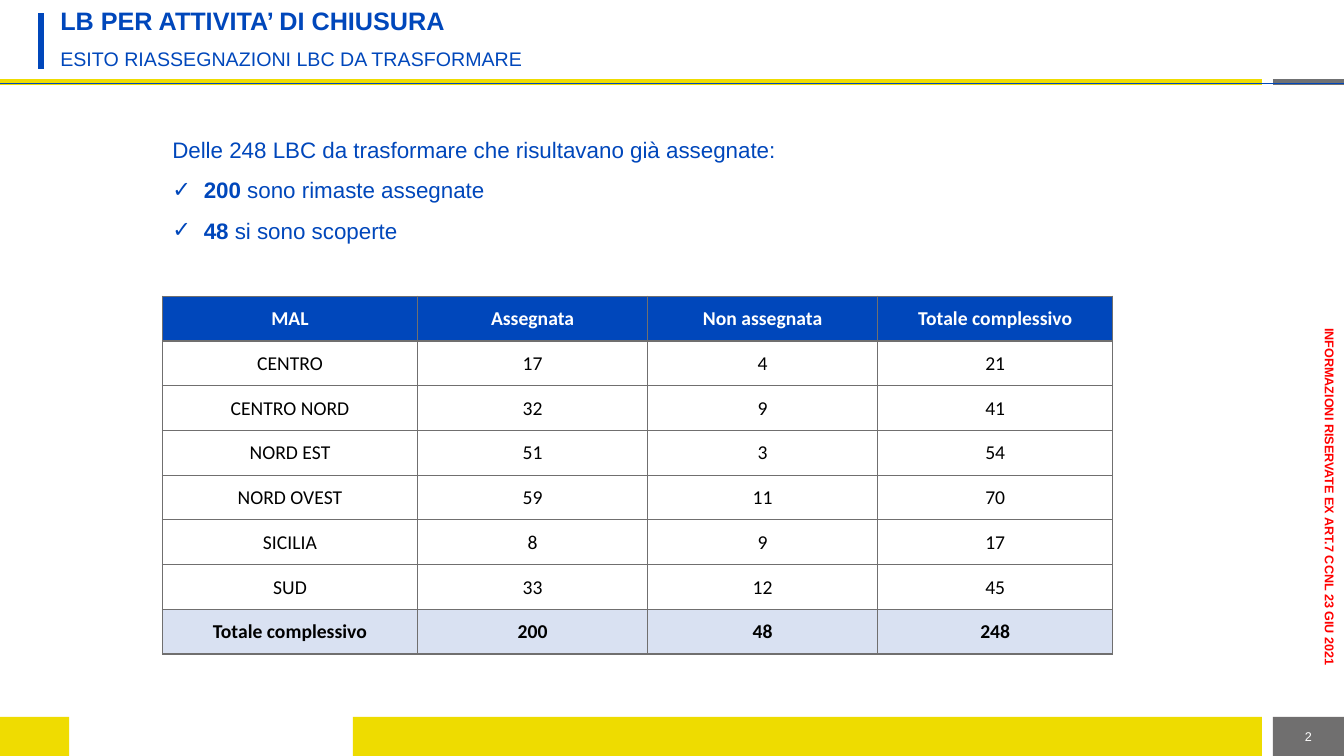
from dataclasses import dataclass

from lxml.etree import SubElement
from pptx import Presentation
from pptx.dml.color import RGBColor as RGB
from pptx.enum.shapes import MSO_CONNECTOR as CONNECTOR, MSO_SHAPE as SHAPE
from pptx.enum.text import MSO_ANCHOR as ANCHOR, PP_ALIGN as ALIGN
from pptx.oxml.ns import qn
from pptx.util import Pt


@dataclass(frozen=True)
class Theme:
    blue: str = "0047BB"
    yellow: str = "EEDC00"
    corner_yellow: str = "EFDC01"
    gray: str = "706F6F"
    rule_gray: str = "707173"
    pale_blue: str = "D9E1F2"
    red: str = "FF0000"
    white: str = "FFFFFF"
    black: str = "000000"
    font: str = "Arial"
    table_font: str = "Calibri"
    title_size: int = 18
    body_size: int = 16
    subtitle_size: int = 14
    table_size: int = 14
    small_size: int = 9


theme = Theme()


def add_run(paragraph, text, size, color, bold=False, font=theme.font):
    run = paragraph.add_run()
    run.text = text
    for name, value in {"name": font, "size": Pt(size), "bold": bold}.items():
        setattr(run.font, name, value)
    run.font.color.rgb = RGB.from_string(color)


def add_text_frame(left, top, width, height, anchor=ANCHOR.MIDDLE, rotation=0):
    """Add a wrapping text box and return its text frame."""
    box = slide.shapes.add_textbox(Pt(left), Pt(top), Pt(width), Pt(height))
    box.rotation = rotation
    box.text_frame.word_wrap = True
    box.text_frame.vertical_anchor = anchor
    return box.text_frame


SLIDE_WIDTH, SLIDE_HEIGHT = 960, 540
FOOTER_TOP, FOOTER_HEIGHT = 512, 28
BAND_END, NUMBER_LEFT = 901.4, 909.2
NUMBER_WIDTH = SLIDE_WIDTH - NUMBER_LEFT

prs = Presentation()
prs.slide_width, prs.slide_height = Pt(SLIDE_WIDTH), Pt(SLIDE_HEIGHT)
slide = prs.slides.add_slide(prs.slide_layouts[6])

# Footer bands
for left, width, color in (
    (0, 49.5, theme.corner_yellow),
    (BAND_END, NUMBER_LEFT - BAND_END, theme.white),
    (NUMBER_LEFT, NUMBER_WIDTH, theme.gray),
    (252, BAND_END - 252, theme.yellow),
):
    band = slide.shapes.add_shape(
        SHAPE.RECTANGLE, Pt(left), Pt(FOOTER_TOP), Pt(width), Pt(FOOTER_HEIGHT))
    band.shadow.inherit = False
    band.fill.solid()
    band.fill.fore_color.rgb = RGB.from_string(color)
    band.line.fill.background()

# Header rules and title accent
for x1, y1, x2, y2, color, weight in (
    (0, 58.5, BAND_END, 58.5, theme.yellow, 4),
    (NUMBER_LEFT, 58.5, SLIDE_WIDTH, 58.5, theme.rule_gray, 4),
    (29.3, 9.4, 29.3, 49.5, theme.blue, 3.75),
    (0, 59.5, SLIDE_WIDTH, 59.5, theme.blue, 1),
):
    rule = slide.shapes.add_connector(
        CONNECTOR.STRAIGHT, Pt(x1), Pt(y1), Pt(x2), Pt(y2))
    rule.line.color.rgb = RGB.from_string(color)
    rule.line.width = Pt(weight)
    SubElement(rule.element.spPr, qn("a:effectLst"))

# Confidentiality notice along the right edge
notice = add_text_frame(782.6, 346.3, 334.8, 17.3, rotation=90)
for side in ("left", "top", "right", "bottom"):
    setattr(notice, f"margin_{side}", 0)
notice.paragraphs[0].alignment = ALIGN.CENTER
add_run(notice.paragraphs[0], "INFORMAZIONI RISERVATE EX ART.7 CCNL 23 GIU 2021",
        theme.small_size, theme.red, bold=True)

# Title, subtitle and slide number
title = add_text_frame(36, 2.9, 899, 28, ANCHOR.TOP).paragraphs[0]
title.line_spacing = 0.9
add_run(title, "LB PER ATTIVITA’ DI CHIUSURA", theme.title_size, theme.blue, bold=True)

subtitle = add_text_frame(36, 28, 899, 30).paragraphs[0]
subtitle.line_spacing = 0.9
add_run(subtitle, "ESITO RIASSEGNAZIONI LBC DA TRASFORMARE",
        theme.subtitle_size, theme.blue)

slide_number = add_text_frame(
    NUMBER_LEFT, FOOTER_TOP, NUMBER_WIDTH, FOOTER_HEIGHT).paragraphs[0]
slide_number.alignment = ALIGN.CENTER
add_run(slide_number, "2", theme.small_size, theme.white)

# Summary with ticked outcomes
summary = add_text_frame(116, 84.2, 679, 90.7, ANCHOR.TOP)
intro = summary.paragraphs[0]
add_run(intro, "Delle 248 LBC da trasformare che risultavano già assegnate:",
        theme.body_size, theme.blue)
for count, outcome in (("200", " sono rimaste assegnate"), ("48", " si sono scoperte")):
    item = summary.add_paragraph()
    properties = item._p.get_or_add_pPr()
    properties.set("marL", str(Pt(22.5)))
    properties.set("indent", str(-Pt(22.5)))
    SubElement(properties, qn("a:buFont"), typeface=theme.font)
    SubElement(properties, qn("a:buChar"), char="✓")
    add_run(item, count, theme.body_size, theme.blue, bold=True)
    add_run(item, outcome, theme.body_size, theme.blue)
for paragraph in summary.paragraphs:
    paragraph.alignment = ALIGN.JUSTIFY
    paragraph.line_spacing = 1.5

# Assignments by area, with totals
areas = [
    ("CENTRO", 17, 4),
    ("CENTRO NORD", 32, 9),
    ("NORD EST", 51, 3),
    ("NORD OVEST", 59, 11),
    ("SICILIA", 8, 9),
    ("SUD", 33, 12),
]
total = ("Totale complessivo", sum(a[1] for a in areas), sum(a[2] for a in areas))
rows = [("MAL", "Assegnata", "Non assegnata", "Totale complessivo")]
rows += [(*area, area[1] + area[2]) for area in areas + [total]]
column_widths = (182.3, 164.3, 164.3, 168)
ROW_HEIGHT = 31.95

table = slide.shapes.add_table(
    len(rows), len(column_widths), Pt(116), Pt(211.6),
    Pt(sum(column_widths)), Pt(ROW_HEIGHT * len(rows))).table
for column, width in zip(table.columns, column_widths):
    column.width = Pt(width)
cell_format = {
    "vertical_anchor": ANCHOR.MIDDLE,
    "margin_left": Pt(0.7),
    "margin_right": Pt(0.7),
    "margin_top": Pt(0.7),
    "margin_bottom": 0,
}
for r, values in enumerate(rows):
    table.rows[r].height = Pt(ROW_HEIGHT)
    is_header, is_total = r == 0, r == len(rows) - 1
    for c, value in enumerate(values):
        cell = table.cell(r, c)
        for name, setting in cell_format.items():
            setattr(cell, name, setting)
        for edge in ("lnL", "lnR", "lnT", "lnB"):
            border = SubElement(cell._tc.get_or_add_tcPr(), qn(f"a:{edge}"), w=str(Pt(1)))
            SubElement(SubElement(border, qn("a:solidFill")), qn("a:srgbClr"), val=theme.gray)
        if is_header or is_total:
            cell.fill.solid()
            cell.fill.fore_color.rgb = RGB.from_string(
                theme.blue if is_header else theme.pale_blue)
        else:
            cell.fill.background()
        label = cell.text_frame.paragraphs[0]
        label.alignment = ALIGN.CENTER
        add_run(label, str(value), theme.table_size,
                theme.white if is_header else theme.black,
                is_header or is_total, theme.table_font)

prs.save("out.pptx")
